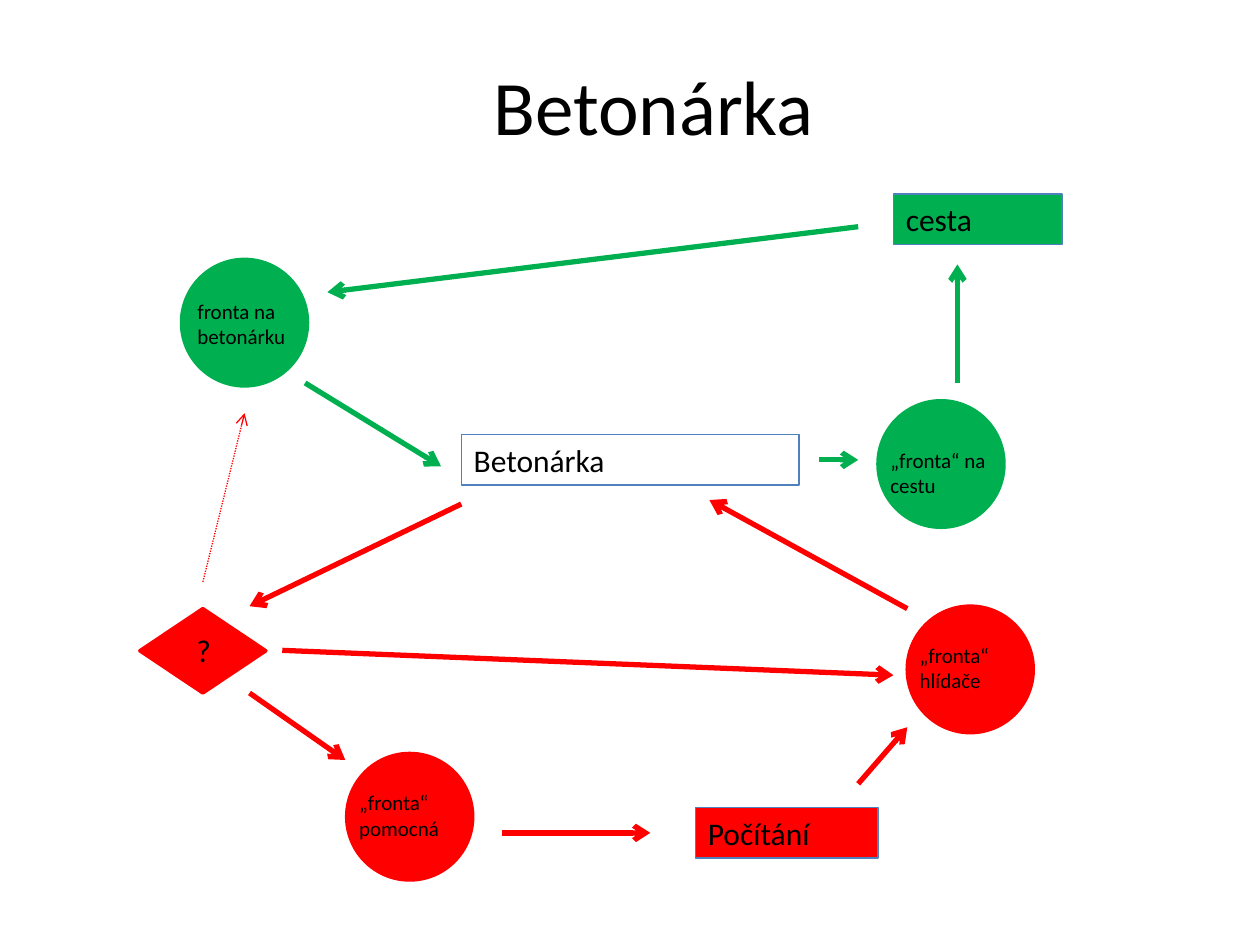
"""Build the concrete plant queueing diagram slide."""
from dataclasses import dataclass

from lxml import etree
from pptx import Presentation
from pptx.dml.color import RGBColor
from pptx.enum.dml import MSO_LINE
from pptx.enum.shapes import MSO_CONNECTOR, MSO_SHAPE
from pptx.enum.text import MSO_ANCHOR, MSO_AUTO_SIZE, PP_ALIGN
from pptx.oxml.ns import qn
from pptx.util import Cm, Pt

RECTANGLE, OVAL, DECISION = MSO_SHAPE.RECTANGLE, MSO_SHAPE.OVAL, MSO_SHAPE.FLOWCHART_DECISION
STRAIGHT, DOTTED = MSO_CONNECTOR.STRAIGHT, MSO_LINE.ROUND_DOT
TOP, MIDDLE = MSO_ANCHOR.TOP, MSO_ANCHOR.MIDDLE
LEFT, CENTER = PP_ALIGN.LEFT, PP_ALIGN.CENTER
GROW = MSO_AUTO_SIZE.SHAPE_TO_FIT_TEXT


@dataclass(frozen=True)
class Theme:
    green: RGBColor = RGBColor(0x00, 0xB0, 0x50)
    red: RGBColor = RGBColor(0xFF, 0x00, 0x00)
    border: RGBColor = RGBColor(0x4F, 0x81, 0xBD)
    ink: RGBColor = RGBColor(0x00, 0x00, 0x00)
    font: str = "Calibri"
    title: Pt = Pt(44)
    body: Pt = Pt(18)
    label: Pt = Pt(12)


theme = Theme()


def add_node(kind, left, top, width, height, fill, line, weight):
    node = slide.shapes.add_shape(kind, Cm(left), Cm(top), Cm(width), Cm(height))
    node.shadow.inherit = False
    if fill is None:
        node.fill.background()
    else:
        node.fill.solid()
        node.fill.fore_color.rgb = fill
    node.line.color.rgb = line
    node.line.width = Pt(weight)
    return node


def write(holder, text, size, align=LEFT, anchor=TOP):
    frame = holder.text_frame
    frame.word_wrap = True
    frame.auto_size = GROW if anchor == TOP else MSO_AUTO_SIZE.NONE
    frame.vertical_anchor = anchor
    paragraph = frame.paragraphs[0]
    paragraph.alignment = align
    run = paragraph.add_run()
    run.text = text
    run.font.name = theme.font
    run.font.size = size
    run.font.color.rgb = theme.ink


prs = Presentation()
prs.slide_width, prs.slide_height = Cm(25.4), Cm(19.05)
slide = prs.slides.add_slide(prs.slide_layouts[6])

heading = slide.shapes.add_textbox(Cm(1.75), Cm(0.53), Cm(22.86), Cm(3.18))
write(heading, "Betonárka", theme.title, CENTER, MIDDLE)

activities = [
    ("Betonárka", 9.3, 8.76, 6.81, None),
    ("cesta", 18.01, 3.91, 3.4, theme.green),
    ("Počítání", 14.02, 16.28, 3.68, theme.red),
]
for name, left, top, width, color in activities:
    activity = add_node(RECTANGLE, left, top, width, 1.02, color, theme.border, 0.75)
    write(activity, name, theme.body)

queues = [
    ("fronta na betonárku", 3.66, 5.23, 0.07, 0.66, theme.green),
    ("„fronta“ na cestu", 17.7, 8.08, 0, 0.81, theme.green),
    ("„fronta“ hlídače", 18.29, 12.22, 0, 0.61, theme.red),
    ("„fronta“ pomocná", 6.99, 15.19, 0, 0.61, theme.red),
]
for name, left, top, indent, drop, color in queues:
    add_node(OVAL, left, top, 2.54, 2.55, color, color, 2)
    queue_label = slide.shapes.add_textbox(Cm(left + indent), Cm(top + drop), Cm(2.59), Cm(1.27))
    write(queue_label, name, theme.label)

add_node(DECISION, 2.82, 12.27, 2.54, 1.7, theme.red, theme.red, 2)
question = slide.shapes.add_textbox(Cm(3.71), Cm(12.6), Cm(1.7), Cm(1.02))
write(question, "?", theme.body)

flows = [
    (18.29, 12.27, 14.3, 10.08, theme.red, 3, None),
    (6.15, 7.72, 8.89, 9.4, theme.green, 3, None),
    (16.51, 9.27, 17.3, 9.27, theme.green, 3, None),
    (19.3, 7.72, 19.3, 5.33, theme.green, 3, None),
    (17.3, 4.57, 6.6, 5.89, theme.green, 3, None),
    (9.3, 10.16, 5.03, 12.22, theme.red, 3, None),
    (17.3, 15.8, 18.29, 14.66, theme.red, 3, None),
    (10.11, 16.79, 13.11, 16.79, theme.red, 3, None),
    (5.69, 13.11, 18.01, 13.61, theme.red, 3, None),
    (4.09, 11.73, 4.93, 8.33, theme.red, 0.75, DOTTED),
    (5.03, 13.97, 6.96, 15.32, theme.red, 3, None),
]
for x1, y1, x2, y2, color, weight, dash in flows:
    flow = slide.shapes.add_connector(STRAIGHT, Cm(x1), Cm(y1), Cm(x2), Cm(y2))
    flow.line.color.rgb = color
    flow.line.width = Pt(weight)
    if dash is not None:
        flow.line.dash_style = dash
    etree.SubElement(flow.line._get_or_add_ln(), qn("a:tailEnd"), type="arrow")
    etree.SubElement(flow._element.spPr, qn("a:effectLst"))

prs.save("out.pptx")
